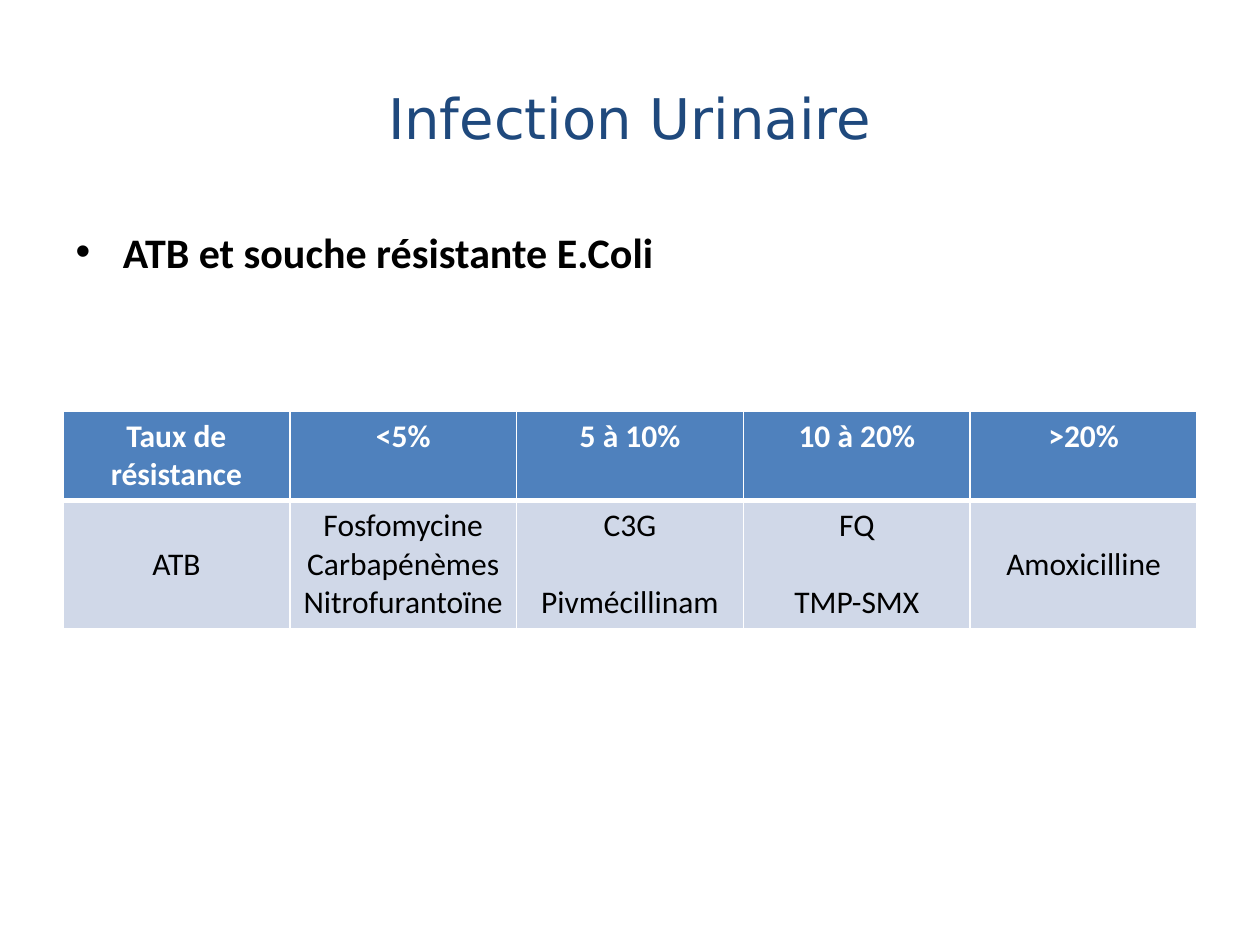
from dataclasses import dataclass

from lxml import etree
from pptx import Presentation
from pptx.dml.color import RGBColor
from pptx.enum.text import MSO_ANCHOR, PP_ALIGN
from pptx.oxml.ns import qn
from pptx.util import Emu, Pt

CENTER = PP_ALIGN.CENTER
TOP, MIDDLE = MSO_ANCHOR.TOP, MSO_ANCHOR.MIDDLE
EMU_PER_INCH, PX_PER_INCH = 914400, 126


@dataclass(frozen=True)
class Theme:
    title_font: str = "DejaVu Sans"
    body_font: str = "Calibri"
    title_size: int = 32
    body_size: int = 24
    table_size: int = 18
    title: str = "1F497D"
    text: str = "000000"
    white: str = "FFFFFF"
    header_fill: str = "4F81BD"
    body_fill: str = "D0D8E8"
    thin_border: int = 1
    thick_border: int = 3
    line_gap: int = 22


@dataclass(frozen=True)
class Box:
    left: int
    top: int
    width: int
    height: int


@dataclass(frozen=True)
class ResistanceGroup:
    rate: str
    antibiotics: tuple[str, ...]


THEME = Theme()
TITLE_BOX = Box(63, 38, 1134, 158)
BODY_BOX = Box(63, 220, 1157, 643)
TABLE_BOX = Box(63, 411, 1134, 216)
ROW_HEIGHTS = (88, 128)
GROUPS = (
    ResistanceGroup("Taux de résistance", ("ATB",)),
    ResistanceGroup("<5%", ("Fosfomycine", "Carbapénèmes", "Nitrofurantoïne")),
    ResistanceGroup("5 à 10%", ("C3G", "Pivmécillinam")),
    ResistanceGroup("10 à 20%", ("FQ", "TMP-SMX")),
    ResistanceGroup(">20%", ("Amoxicilline",)),
)


def px(value: int) -> Emu:
    return Emu(value * EMU_PER_INCH // PX_PER_INCH)


def place(shape, box: Box) -> None:
    shape.left, shape.top = px(box.left), px(box.top)
    shape.width, shape.height = px(box.width), px(box.height)


def add_run(paragraph, text: str, font_name: str, size: int, color: str, bold: bool = False) -> None:
    run = paragraph.add_run()
    run.text = text
    run.font.name = font_name
    run.font.size = Pt(size)
    run.font.bold = bold
    run.font.color.rgb = RGBColor.from_string(color)


def add_border(cell, side: str, width: int) -> None:
    """Draw a white line on one side (L, R, T or B); call before filling the cell."""
    properties = cell._tc.get_or_add_tcPr()
    line = etree.SubElement(properties, qn(f"a:ln{side}"), w=str(Pt(width)))
    fill = etree.SubElement(line, qn("a:solidFill"))
    etree.SubElement(fill, qn("a:srgbClr"), val=THEME.white)


def fill_cell(cell, lines: tuple[str, ...], is_header: bool) -> None:
    top = THEME.thin_border if is_header else THEME.thick_border
    bottom = THEME.thick_border if is_header else THEME.thin_border
    for side, width in (("L", THEME.thin_border), ("R", THEME.thin_border), ("T", top), ("B", bottom)):
        add_border(cell, side, width)
    cell.fill.solid()
    cell.fill.fore_color.rgb = RGBColor.from_string(THEME.header_fill if is_header else THEME.body_fill)
    cell.vertical_anchor = TOP if is_header else MIDDLE

    frame = cell.text_frame
    for index, text in enumerate(lines):
        paragraph = frame.add_paragraph() if index else frame.paragraphs[0]
        paragraph.alignment = CENTER
        if index and len(lines) == 2:
            paragraph.space_before = Pt(THEME.line_gap)
        color = THEME.white if is_header else THEME.text
        add_run(paragraph, text, THEME.body_font, THEME.table_size, color, is_header)


def add_resistance_table(slide, box: Box, groups: tuple[ResistanceGroup, ...]) -> None:
    table = slide.shapes.add_table(
        len(ROW_HEIGHTS), len(groups), px(box.left), px(box.top), px(box.width), px(box.height)
    ).table
    for row, height in zip(table.rows, ROW_HEIGHTS):
        row.height = px(height)
    for column, group in enumerate(groups):
        fill_cell(table.cell(0, column), (group.rate,), is_header=True)
        fill_cell(table.cell(1, column), group.antibiotics, is_header=False)


def main() -> None:
    presentation = Presentation()
    presentation.slide_width, presentation.slide_height = px(1260), px(945)
    slide = presentation.slides.add_slide(presentation.slide_layouts[1])

    title, body = slide.shapes.title, slide.placeholders[1]
    place(title, TITLE_BOX)
    title.text_frame.vertical_anchor = MIDDLE
    heading = title.text_frame.paragraphs[0]
    heading.alignment = CENTER
    add_run(heading, "Infection Urinaire", THEME.title_font, THEME.title_size, THEME.title)

    place(body, BODY_BOX)
    add_run(body.text_frame.paragraphs[0], "ATB et souche résistante E.Coli",
            THEME.body_font, THEME.body_size, THEME.text, bold=True)

    add_resistance_table(slide, TABLE_BOX, GROUPS)
    presentation.save("out.pptx")


if __name__ == "__main__":
    main()
